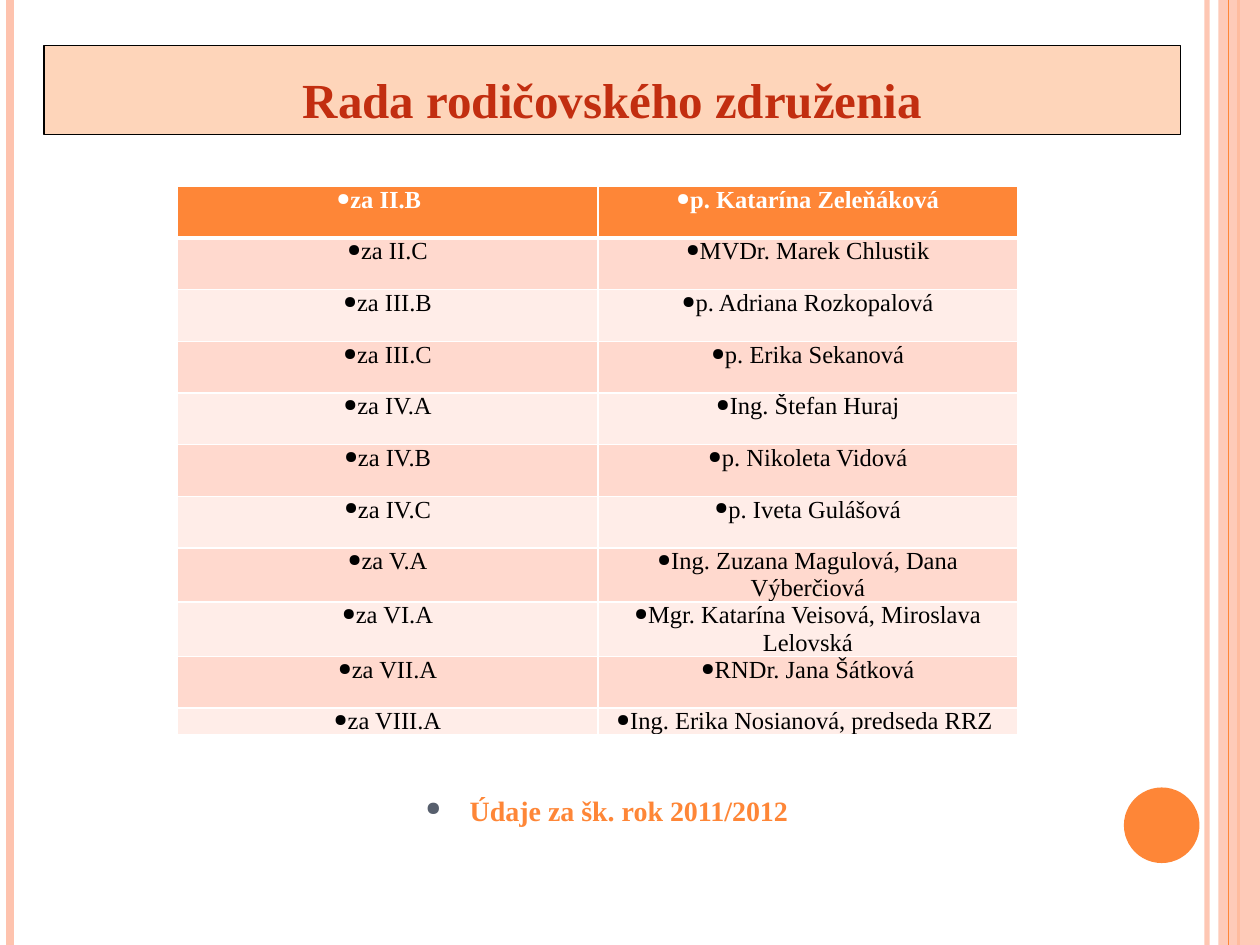
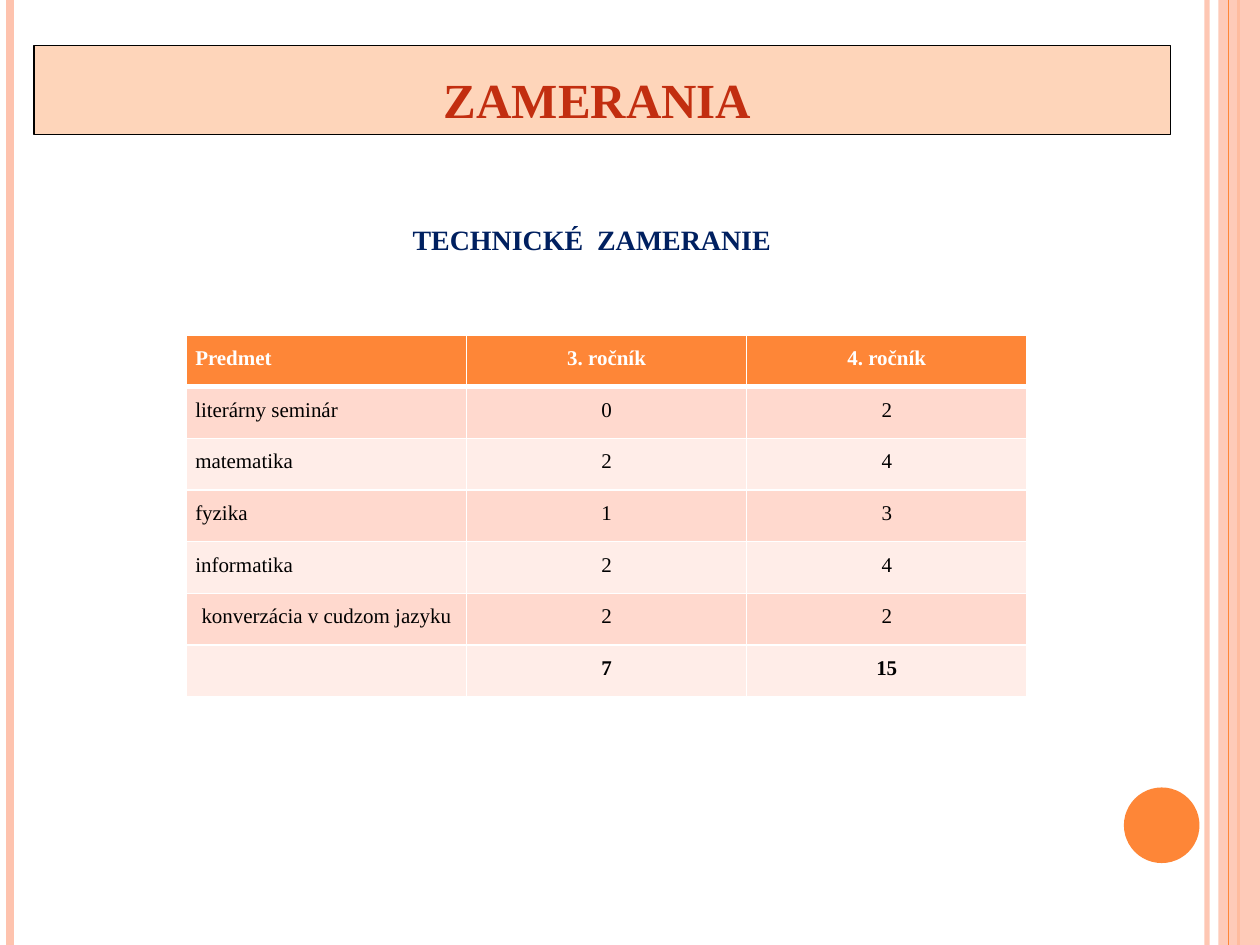
from lxml import etree
from pptx import Presentation
from pptx import util as u
from pptx.dml.color import RGBColor
from pptx.enum import shapes, text
from pptx.oxml import ns

ORANGE = RGBColor(0xFE, 0x86, 0x37)
PEACH = RGBColor(0xFE, 0xC3, 0xAE)
BAND_DARK = RGBColor(0xFF, 0xD9, 0xCE)
BAND_LIGHT = RGBColor(0xFF, 0xED, 0xE8)
RED = RGBColor(0xC2, 0x2E, 0x10)
NAVY = RGBColor(0x00, 0x20, 0x60)
GRAY = RGBColor(0x57, 0x5F, 0x6D)
BLACK = RGBColor(0, 0, 0)
WHITE = RGBColor(255, 255, 255)
FONT = "Times New Roman"
CENTER, JUSTIFY = text.PP_ALIGN.CENTER, text.PP_ALIGN.JUSTIFY


def sub(parent, tag, **attrs):
    el = etree.SubElement(parent, ns.qn(tag))
    for name, value in attrs.items():
        el.set(name, str(value))
    return el


def write(tf, words, size, color, bold=False, align=None, spacing=None):
    p = tf.paragraphs[0]
    p.alignment = align
    p.line_spacing = spacing
    r = p.add_run()
    r.text = words
    f = r.font
    f.name, f.size, f.bold = FONT, u.Pt(size), bold
    f.color.rgb = color
    return p


def bullet(p, color=None, hang=0):
    pPr = p._p.get_or_add_pPr()
    pPr.set("marL", str(u.Inches(hang)))
    pPr.set("indent", str(-u.Inches(hang)))
    if color is not None:
        sub(sub(pPr, "a:buClr"), "a:srgbClr", val=color)
    sub(pPr, "a:buSzPct", val=70000)
    sub(pPr, "a:buChar", char="●")


def set_alpha(parent, percent):
    color = next(parent.iter(ns.qn("a:srgbClr")))
    sub(color, "a:alpha", val=percent * 1000)


def set_borders(cell, top=1, bottom=1):
    tcPr = cell._tc.get_or_add_tcPr()
    widths = {"a:lnL": 1, "a:lnR": 1, "a:lnT": top, "a:lnB": bottom}
    for i, (tag, width) in enumerate(widths.items()):
        ln = sub(tcPr, tag, w=u.Pt(width))
        sub(sub(ln, "a:solidFill"), "a:srgbClr", val=WHITE)
        tcPr.insert(i, ln)


class Deck:
    def __init__(self):
        self.prs = Presentation()
        self.prs.slide_width, self.prs.slide_height = u.Inches(10), u.Inches(7.5)
        self.s = None

    def slide(self, title, left):
        self.s = self.prs.slides.add_slide(self.prs.slide_layouts[5])
        self.stripe(9.58, PEACH, 3, 93)
        self.stripe(0.08, PEACH, 4.5)
        self.stripe(9.83, ORANGE, 1.5)
        self.shape(shapes.MSO_SHAPE.RECTANGLE, 9.67, 0, 0.33, 7.5, PEACH, 87)
        self.stripe(9.75, ORANGE, 0.75)
        self.shape(shapes.MSO_SHAPE.OVAL, 8.92, 6.25, 0.6, 0.6, ORANGE)
        self.title(title, left)

    def stripe(self, x, color, width, alpha=100):
        sp = self.s.shapes.add_connector(
            shapes.MSO_CONNECTOR.STRAIGHT, u.Inches(x), 0, u.Inches(x), u.Inches(7.5))
        sp.line.color.rgb = color
        sp.line.width = u.Pt(width)
        spPr = sp._element.spPr
        if alpha < 100:
            set_alpha(spPr, alpha)
        sub(spPr, "a:effectLst")

    def shape(self, kind, x, y, w, h, color, alpha=100):
        sp = self.s.shapes.add_shape(kind, *map(u.Inches, (x, y, w, h)))
        sp.shadow.inherit = False
        sp.fill.solid()
        sp.fill.fore_color.rgb = color
        sp.line.fill.background()
        if alpha < 100:
            set_alpha(sp._element.spPr, alpha)

    def title(self, words, left):
        sp = self.s.shapes.title
        sp.left, sp.top, sp.width, sp.height = map(u.Inches, (left, 0.36, 9.02, 0.71))
        sp.fill.solid()
        sp.fill.fore_color.rgb = ORANGE
        set_alpha(sp._element.spPr, 34)
        sp.line.color.rgb = BLACK
        sp.line.width = u.Pt(0.75)
        tf = sp.text_frame
        tf.auto_size = text.MSO_AUTO_SIZE.NONE
        tf.vertical_anchor = text.MSO_ANCHOR.BOTTOM
        write(tf, words, 28, RED, True, CENTER)

    def label(self, words, x, y, w, color, align=None):
        sp = self.s.shapes.add_textbox(*map(u.Inches, (x, y, w, 0.37)))
        sp.text_frame.word_wrap = True
        return write(sp.text_frame, words, 16, color, True, align)

    def table(self, rows, x, y, heights, size, inset=0, spacing=None, bullets=False,
              align=lambda i, j: CENTER, bold=lambda i: i == 0):
        cols = len(rows[0])
        frame = self.s.shapes.add_table(
            len(rows), cols, u.Inches(x), u.Inches(y), u.Inches(6.67), u.Inches(sum(heights)))
        table = frame.table
        for row, height in zip(table.rows, heights):
            row.height = u.Inches(height)
        for i, values in enumerate(rows):
            for j, value in enumerate(values):
                cell = table.cell(i, j)
                cell.margin_left = cell.margin_right = u.Inches(inset)
                cell.margin_top = cell.margin_bottom = 0
                cell.fill.solid()
                cell.fill.fore_color.rgb = (
                    ORANGE if i == 0 else BAND_DARK if i % 2 else BAND_LIGHT)
                set_borders(cell, top=3 if i == 1 else 1, bottom=3 if i == 0 else 1)
                if value:
                    p = write(cell.text_frame, value, size, BLACK if i else WHITE,
                              bold(i), align(i, j), spacing)
                    if bullets:
                        bullet(p)
        return table


def council_slide(deck):
    deck.slide("Rada rodičovského združenia", 0.35)
    members = [
        ("za II.B", "p. Katarína Zeleňáková"),
        ("za II.C", "MVDr. Marek Chlustik"),
        ("za III.B", "p. Adriana Rozkopalová"),
        ("za III.C", "p. Erika Sekanová"),
        ("za IV.A", "Ing. Štefan Huraj"),
        ("za IV.B", "p. Nikoleta Vidová"),
        ("za IV.C", "p. Iveta Gulášová"),
        ("za V.A", "Ing. Zuzana Magulová, Dana Výberčiová"),
        ("za VI.A", "Mgr. Katarína Veisová, Miroslava Lelovská"),
        ("za VII.A", "RNDr. Jana Šátková"),
        ("za VIII.A", "Ing. Erika Nosianová, predseda RRZ "),
    ]
    heights = [0.41] * (len(members) - 1) + [0.04]
    table = deck.table(members, 1.41, 1.48, heights, 14, bullets=True)
    table.cell(0, 0).margin_right = u.Inches(0.14)
    p = deck.label("Údaje za šk. rok 2011/2012", 3.28, 6.25, 3.36, ORANGE)
    bullet(p, GRAY, 0.35)


def focus_slide(deck):
    deck.slide("ZAMERANIA ", 0.27)
    subjects = [
        ("Predmet", "3. ročník", "4. ročník"),
        ("literárny seminár", "0", "2"),
        ("matematika", "2", "4"),
        ("fyzika", "1", "3"),
        ("informatika", "2", "4"),
        ("konverzácia v cudzom jazyku", "2", "2"),
        ("", "7", "15"),
    ]
    total = len(subjects) - 1
    deck.table(subjects, 1.48, 2.66, [0.41] * len(subjects), 12, 0.07, 1.5,
               align=lambda i, j: JUSTIFY if j == 0 and i < total - 1 else CENTER,
               bold=lambda i: i in (0, total))
    deck.label("TECHNICKÉ  ZAMERANIE ", 1.25, 1.72, 6.95, NAVY, CENTER)


def main():
    deck = Deck()
    council_slide(deck)
    focus_slide(deck)
    deck.prs.save("out.pptx")


if __name__ == "__main__":
    main()
